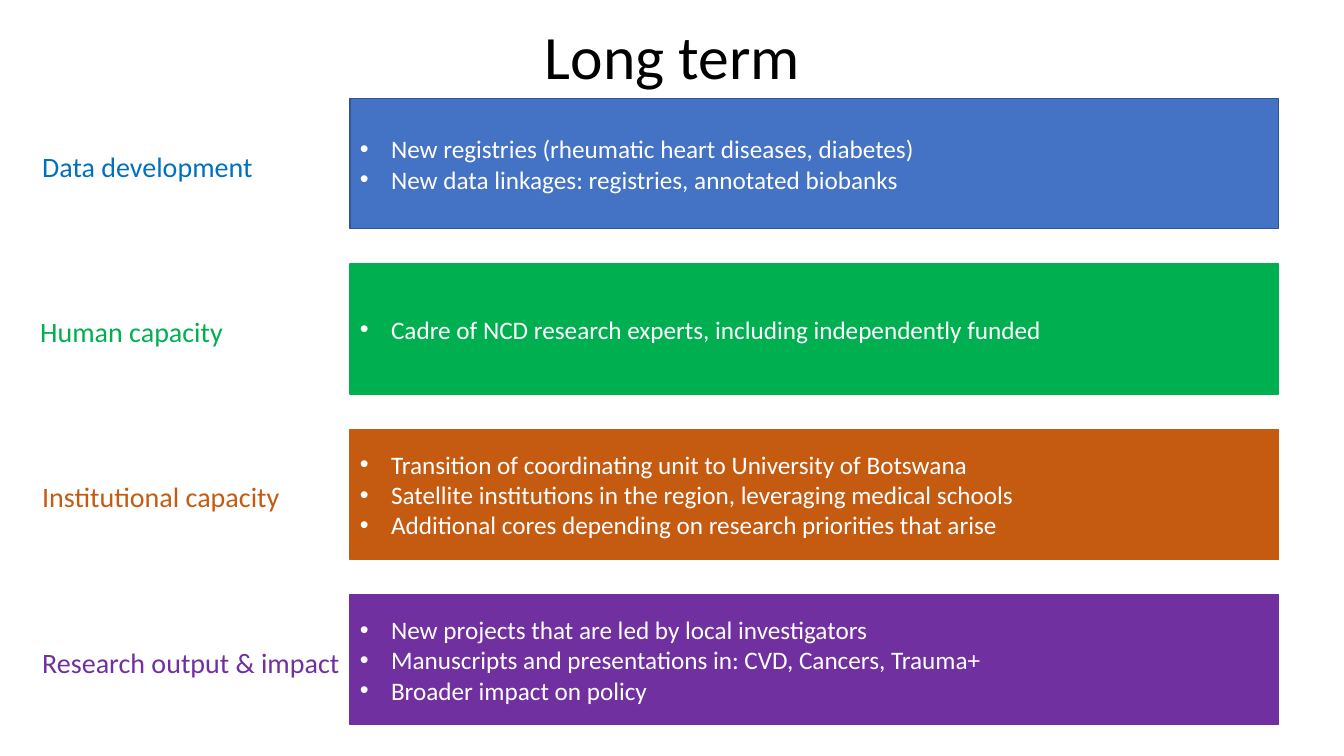
from pptx import Presentation
from pptx.dml.color import RGBColor
from pptx.enum.shapes import MSO_SHAPE
from pptx.enum.text import MSO_ANCHOR, MSO_AUTO_SIZE, PP_ALIGN
from pptx.oxml.ns import qn
from pptx.util import Inches, Pt
from lxml import etree

RECT = MSO_SHAPE.RECTANGLE
MIDDLE = MSO_ANCHOR.MIDDLE
FIT = MSO_AUTO_SIZE.SHAPE_TO_FIT_TEXT
LEFT, CENTER = PP_ALIGN.LEFT, PP_ALIGN.CENTER

BLACK = RGBColor(0x00, 0x00, 0x00)
WHITE = RGBColor(0xFF, 0xFF, 0xFF)
SKY = RGBColor(0x00, 0x70, 0xC0)
BLUE = RGBColor(0x44, 0x72, 0xC4)
NAVY = RGBColor(0x32, 0x54, 0x91)
GREEN = RGBColor(0x00, 0xB0, 0x50)
ORANGE = RGBColor(0xC5, 0x5A, 0x11)
PURPLE = RGBColor(0x70, 0x30, 0xA0)

FONT = "Calibri"
TOP, PITCH = 0.98, 1.64
INDENT = Inches(0.31)

ROWS = [
    ("Data development", 0.32, 2.37, SKY, BLUE, NAVY, [
        "New registries (rheumatic heart diseases, diabetes)",
        "New data linkages: registries, annotated biobanks"]),
    ("Human capacity", 0.3, 2.03, GREEN, GREEN, GREEN, [
        "Cadre of NCD research experts, including independently funded"]),
    ("Institutional capacity", 0.32, 2.58, ORANGE, ORANGE, ORANGE, [
        "Transition of coordinating unit to University of Botswana",
        "Satellite institutions in the region, leveraging medical schools",
        "Additional cores depending on research priorities that arise"]),
    ("Research output & impact", 0.32, 3.18, PURPLE, PURPLE, PURPLE, [
        "New projects that are led by local investigators",
        "Manuscripts and presentations in: CVD, Cancers, Trauma+",
        "Broader impact on policy"]),
]


def add_run(para, text, size, color):
    run = para.add_run()
    run.text = text
    run.font.name = FONT
    run.font.size = Pt(size)
    run.font.color.rgb = color


def add_bullet(para):
    props = para._p.get_or_add_pPr()
    props.set("marL", str(INDENT))
    props.set("indent", str(-INDENT))
    etree.SubElement(props, qn("a:buFont")).set("typeface", "Arial")
    etree.SubElement(props, qn("a:buChar")).set("char", "•")


def add_title(slide, text):
    box = slide.shapes.add_textbox(Inches(0.92), Inches(0.19), Inches(11.5), Inches(0.8))
    frame = box.text_frame
    frame.word_wrap = True
    frame.vertical_anchor = MIDDLE
    para = frame.paragraphs[0]
    para.alignment = CENTER
    para.line_spacing = 0.9
    add_run(para, text, 44, BLACK)


def add_label(slide, text, left, top, width, color):
    box = slide.shapes.add_textbox(Inches(left), Inches(top), Inches(width), Inches(0.44))
    frame = box.text_frame
    frame.word_wrap = False
    frame.auto_size = FIT
    add_run(frame.paragraphs[0], text, 20, color)


def add_panel(slide, top, fill, edge, items):
    panel = slide.shapes.add_shape(RECT, Inches(3.47), Inches(top), Inches(9.21), Inches(1.29))
    panel.shadow.inherit = False
    panel.fill.solid()
    panel.fill.fore_color.rgb = fill
    panel.line.color.rgb = edge
    panel.line.width = Pt(1)
    frame = panel.text_frame
    frame.word_wrap = True
    frame.vertical_anchor = MIDDLE
    for i, item in enumerate(items):
        para = frame.add_paragraph() if i else frame.paragraphs[0]
        para.alignment = LEFT
        add_bullet(para)
        add_run(para, item, 18, WHITE)


def main():
    deck = Presentation()
    deck.slide_width = Inches(13.33)
    deck.slide_height = Inches(7.5)
    slide = deck.slides.add_slide(deck.slide_layouts[6])
    add_title(slide, "Long term")
    for i, (label, left, width, color, fill, edge, items) in enumerate(ROWS):
        top = TOP + i * PITCH
        add_panel(slide, top, fill, edge, items)
        add_label(slide, label, left, top + 0.45, width, color)
    deck.save("out.pptx")


if __name__ == "__main__":
    main()
